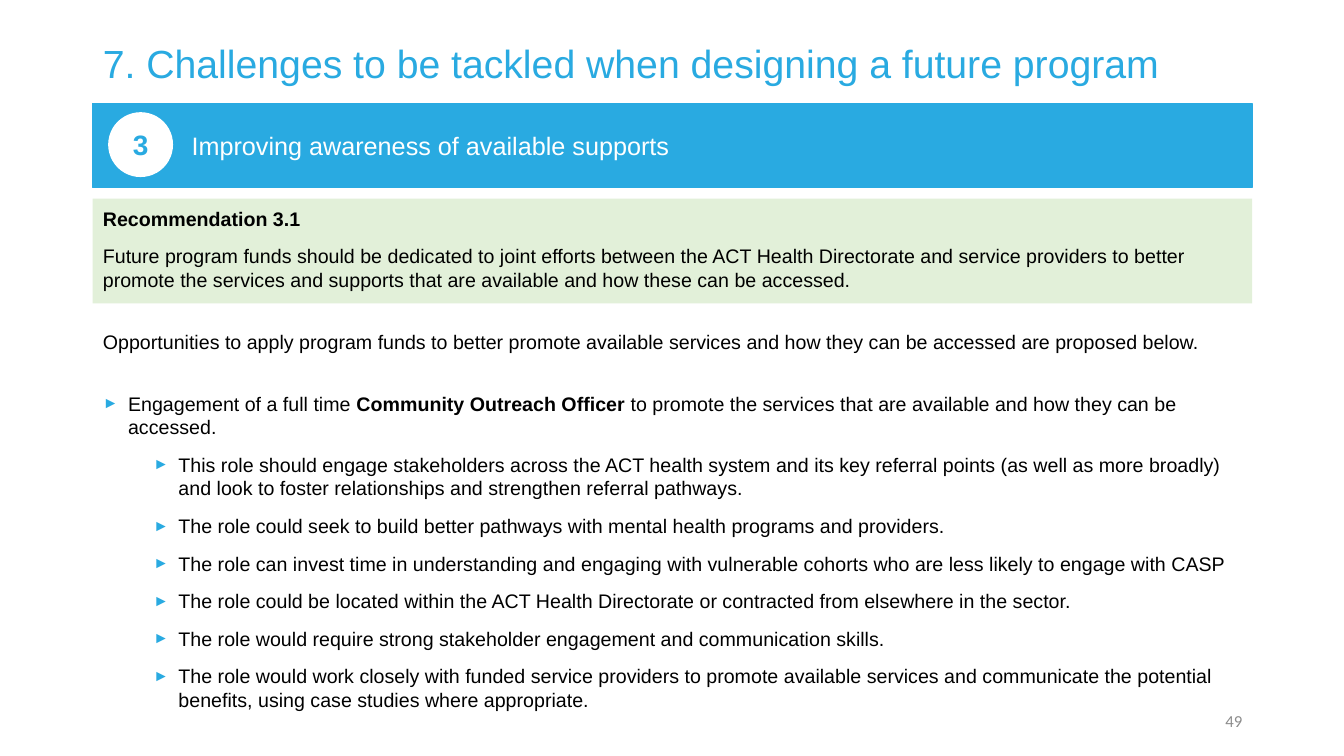
from lxml import etree
from pptx import Presentation
from pptx.dml.color import RGBColor
from pptx.enum.shapes import MSO_SHAPE
from pptx.enum.text import MSO_ANCHOR, MSO_AUTO_SIZE, PP_ALIGN
from pptx.oxml.ns import qn
from pptx.util import Inches, Pt

RECTANGLE, OVAL = MSO_SHAPE.RECTANGLE, MSO_SHAPE.OVAL
MIDDLE, TOP = MSO_ANCHOR.MIDDLE, MSO_ANCHOR.TOP
LEFT, CENTER, RIGHT = PP_ALIGN.LEFT, PP_ALIGN.CENTER, PP_ALIGN.RIGHT

COLORS = {"blue": "29AAE1", "green": "E2F0D9", "white": "FFFFFF",
          "black": "000000", "gray": "8C8C8C"}
WIDTH, HEIGHT = 13.33, 7.5
MARGIN = 0.92
CONTENT = 11.5
INDENT = 0.25
GAP, WIDE_GAP = 10, 27.5

# Each paragraph: bullet depth (0 is plain), space before, spans of (text, bold)
INTRO = [
    (0, 0, [("Recommendation 3.1", True)]),
    (0, GAP, [("Future program funds should be dedicated to joint efforts between the ACT Health "
               "Directorate and service providers to better promote the services and supports that "
               "are available and how these can be accessed.", False)]),
    (0, WIDE_GAP, [("Opportunities to apply program funds to better promote available services and "
                    "how they can be accessed are proposed below.", False)]),
    (1, WIDE_GAP, [("Engagement of a full time ", False),
                   ("Community Outreach Officer ", True),
                   ("to promote the services that are available and how they can be accessed.", False)]),
]
ROLE_POINTS = [
    "This role should engage stakeholders across the ACT health system and its key referral points "
    "(as well as more broadly) and look to foster relationships and strengthen referral pathways.",
    "The role could seek to build better pathways with mental health programs and providers.",
    "The role can invest time in understanding and engaging with vulnerable cohorts who are less "
    "likely to engage with CASP",
    "The role could be located within the ACT Health Directorate or contracted from elsewhere in "
    "the sector.",
    "The role would require strong stakeholder engagement and communication skills.",
    "The role would work closely with funded service providers to promote available services and "
    "communicate the potential benefits, using case studies where appropriate.",
]


def color(name):
    return RGBColor.from_string(COLORS[name])


def place(box, left, top, width, height):
    box.left, box.top = Inches(left), Inches(top)
    box.width, box.height = Inches(width), Inches(height)


def style_font(font, size, color_name, bold=False, name="Arial"):
    font.name, font.size, font.bold = name, Pt(size), bold
    font.color.rgb = color(color_name)


def write_line(box, text, size, color_name, align=LEFT, bold=False, name="Arial"):
    frame = box.text_frame
    frame.text = text
    frame.word_wrap = True
    frame.auto_size = MSO_AUTO_SIZE.NONE
    frame.vertical_anchor = MIDDLE
    para = frame.paragraphs[0]
    para.alignment = align
    style_font(para.runs[0].font, size, color_name, bold, name)


def add_block(shapes, kind, fill, area, outlined=True):
    block = shapes.add_shape(kind, *(Inches(length) for length in area))
    block.shadow.inherit = False
    block.fill.solid()
    block.fill.fore_color.rgb = color(fill)
    if outlined:
        block.line.color.rgb = color(fill)
        block.line.width = Pt(1)
    else:
        block.line.fill.background()
    return block


def set_bullet(para, depth):
    """Depth 0 clears the bullet; deeper paragraphs get a blue arrowhead."""
    props = para._p.get_or_add_pPr()
    if depth == 0:
        props.set("marL", "0")
        props.set("indent", "0")
        etree.SubElement(props, qn("a:buNone"))
        return
    para.level = depth - 1
    props.set("marL", str(Inches(INDENT * (2 * depth - 1))))
    props.set("indent", str(-Inches(INDENT)))
    tint = etree.SubElement(props, qn("a:buClr"))
    etree.SubElement(tint, qn("a:srgbClr"), val=COLORS["blue"])
    etree.SubElement(props, qn("a:buSzPct"), val="80000")
    etree.SubElement(props, qn("a:buFont"), typeface="Arial")
    etree.SubElement(props, qn("a:buChar"), char="►")


def write_body(body, paragraphs):
    frame = body.text_frame
    frame.word_wrap = True
    frame.auto_size = MSO_AUTO_SIZE.NONE
    frame.vertical_anchor = TOP
    for index, (depth, space, spans) in enumerate(paragraphs):
        para = frame.add_paragraph() if index else frame.paragraphs[0]
        set_bullet(para, depth)
        para.alignment = LEFT
        para.space_before = Pt(space)
        for text, bold in spans:
            span = para.add_run()
            span.text = text
            style_font(span.font, 14, "black", bold)


def add_heading(page, number, text):
    group = page.shapes.add_group_shape()
    banner = add_block(group.shapes, RECTANGLE, "blue", (MARGIN, 1.03, CONTENT, 0.83))
    write_line(banner, text, 18, "white")
    banner.text_frame.margin_left = Inches(0.98)
    badge = add_block(group.shapes, OVAL, "white", (1.08, 1.12, 0.63, 0.63))
    write_line(badge, number, 20, "blue", CENTER, bold=True)


def main():
    deck = Presentation()
    deck.slide_width, deck.slide_height = Inches(WIDTH), Inches(HEIGHT)
    page = deck.slides.add_slide(deck.slide_layouts[1])
    title, body = page.shapes.title, page.placeholders[1]

    panel = add_block(page.shapes, RECTANGLE, "green", (MARGIN, 1.97, CONTENT, 1.04), outlined=False)
    title.element.addprevious(panel.element)

    place(title, MARGIN, 0.4, CONTENT, 0.51)
    write_line(title, "7. Challenges to be tackled when designing a future program", 28, "blue")
    title.text_frame.paragraphs[0].line_spacing = 0.9

    place(body, MARGIN, 2, CONTENT, 4.76)
    write_body(body, INTRO + [(2, GAP, [(point, False)]) for point in ROLE_POINTS])

    number_width = 3
    page_number = page.shapes.add_textbox(
        Inches(MARGIN + CONTENT - number_width), Inches(6.95), Inches(number_width), Inches(0.4))
    write_line(page_number, "49", 12, "gray", RIGHT, name="Calibri")

    add_heading(page, "3", "Improving awareness of available supports")
    deck.save("out.pptx")


if __name__ == "__main__":
    main()
